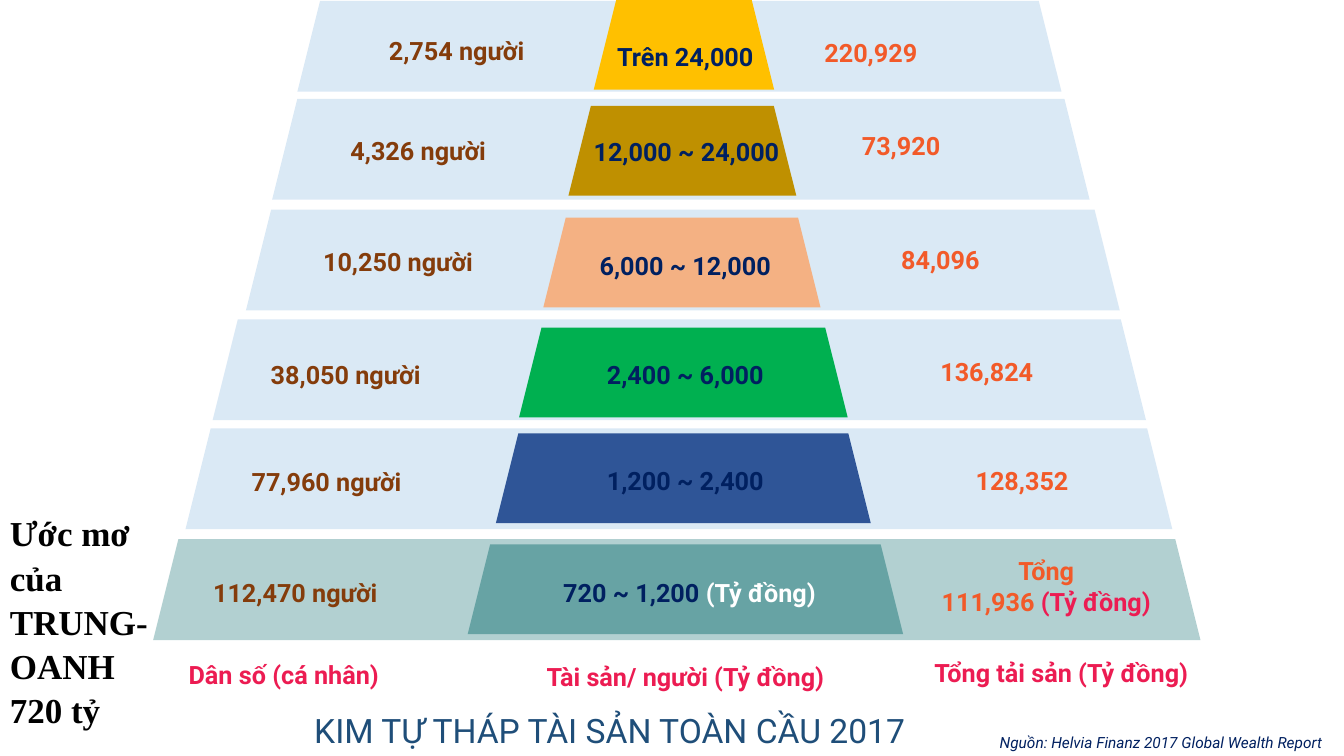
from dataclasses import dataclass
from typing import NamedTuple

from lxml.etree import SubElement
from pptx import Presentation
from pptx.dml.color import RGBColor
from pptx.enum.shapes import MSO_AUTO_SHAPE_TYPE as ShapeType
from pptx.enum.text import MSO_ANCHOR as Anchor, MSO_AUTO_SIZE as AutoSize, PP_ALIGN as Align
from pptx.oxml.ns import qn
from pptx.shapes.autoshape import Shape
from pptx.slide import Slide
from pptx.util import Pt


@dataclass(frozen=True)
class Theme:
    sans: str = "Roboto"
    serif: str = "Times New Roman"
    body: float = 18
    title: float = 24
    dream: float = 25
    source: float = 11
    line_spacing: float = 1.05
    white: str = "FFFFFF"
    black: str = "000000"
    navy: str = "002060"
    brown: str = "843C0B"
    orange: str = "F25A29"
    pink: str = "EC1C52"
    heading: str = "1F4E79"
    band: str = "5B9BD5"
    teal: str = "67A3A4"
    blue: str = "2F5597"
    green: str = "00B050"
    peach: str = "F4B183"
    ochre: str = "BF9000"
    gold: str = "FFC000"


THEME = Theme()


class Box(NamedTuple):
    left: float
    top: float
    width: float
    height: float


class Span(NamedTuple):
    text: str
    color: str
    size: float = THEME.body
    font: str = THEME.sans
    bold: bool = True
    italic: bool = False


Lines = list[list[Span]]


@dataclass(frozen=True)
class Label:
    box: Box
    lines: Lines
    align: Align = Align.CENTER


@dataclass(frozen=True)
class Tier:
    band: Box
    core: Box
    core_color: str
    people: Label
    wealth: Label
    total: Label
    band_color: str = THEME.band
    band_opacity: int = 22


def value(left: float, top: float, *lines: list[Span], width: float = 162.7, height: float = 28.8) -> Label:
    """Make a centred label of the usual size."""
    return Label(Box(left, top, width, height), list(lines))


def people(left: float, top: float, count: str) -> Label:
    """Make a head-count label."""
    return value(left, top, [Span(f"{count} người", THEME.brown)])


def wealth(left: float, top: float, limits: str) -> Label:
    """Make a wealth-range label."""
    return value(left, top, [Span(limits, THEME.navy)])


def total(left: float, top: float, amount: str) -> Label:
    """Make a total-wealth label."""
    return value(left, top, [Span(amount, THEME.orange)])


TIERS = [
    Tier(Box(212.4, 0.7, 545.8, 64.8), Box(424.1, 0, 128.9, 64.1), THEME.gold,
         people(244.8, 20.9, "2,754"), wealth(408.2, 25.2, "Trên 24,000"), total(540.7, 22.3, "220,929")),
    Tier(Box(194.4, 70.6, 583.9, 72), Box(406.1, 75.6, 162.7, 64.1), THEME.ochre,
         people(217.4, 92.2, "4,326"), wealth(409, 92.9, "12,000 ~ 24,000"), total(562.3, 88.6, "73,920")),
    Tier(Box(175.7, 149.8, 624.2, 72), Box(388.1, 155.5, 198, 64.1), THEME.peach,
         people(203, 171.4, "10,250"), wealth(408.2, 174.2, "6,000 ~ 12,000"), total(590.4, 169.9, "84,096")),
    Tier(Box(151.9, 228.2, 666.7, 72), Box(370.8, 234, 234.7, 64.1), THEME.green,
         people(165.6, 252, "38,050"), wealth(408.2, 252, "2,400 ~ 6,000"), total(623.5, 249.8, "136,824")),
    Tier(Box(132.5, 306, 704.9, 72), Box(354.2, 309.6, 267.8, 64.1), THEME.blue,
         people(151.9, 328.3, "77,960"), wealth(408.2, 327.6, "1,200 ~ 2,400"), total(648.7, 327.6, "128,352")),
    Tier(Box(109.4, 385.2, 748.1, 72), Box(334.1, 388.8, 311, 64.1), THEME.teal,
         people(129.6, 407.5, "112,470"),
         value(388.1, 407.5, [Span("720 ~ 1,200 ", THEME.navy), Span("(Tỷ đồng)", THEME.white)],
               width=208.8, height=51.1),
         value(653, 391.7, [Span("Tổng", THEME.orange)],
               [Span("111,936 ", THEME.orange), Span("(Tỷ đồng)", THEME.pink)], width=188.6, height=51.1),
         THEME.teal, 50),
]

COLUMN_NAMES = [
    value(114.5, 466.6, [Span("Dân số (cá nhân)", THEME.pink)], width=176.4),
    value(334.1, 468, [Span("Tài sản/ người (Tỷ đồng)", THEME.pink)], width=311),
    value(648.7, 465.1, [Span("Tổng tải sản (Tỷ đồng)", THEME.pink)], width=218.9),
]

CAPTIONS = [
    Label(Box(217.4, 501.8, 667.4, 36),
          [[Span("KIM TỰ THÁP TÀI SẢN TOÀN CẦU 2017", THEME.heading, THEME.title, bold=False)]], Align.LEFT),
    Label(Box(707, 519.1, 259.9, 20.9),
          [[Span("Nguồn: Helvia Finanz 2017 Global Wealth Report", THEME.navy, THEME.source,
                 bold=False, italic=True)]], Align.LEFT),
    Label(Box(0, 360.7, 114.5, 158.4),
          [[Span(text, THEME.black, THEME.dream, THEME.serif)]
           for text in ("Ước mơ của", "TRUNG- OANH", "720 tỷ")], Align.LEFT),
]


def points(box: Box) -> list[Pt]:
    """Turn a box into lengths."""
    return [Pt(length) for length in box]


def add_block(slide: Slide, kind: ShapeType, box: Box, color: str, opacity: int = 100) -> Shape:
    """Draw a filled shape without outline or shadow."""
    shape = slide.shapes.add_shape(kind, *points(box))
    shape.shadow.inherit = False
    shape.line.fill.background()
    shape.fill.solid()
    shape.fill.fore_color.rgb = RGBColor.from_string(color)
    if opacity < 100:
        color_element = next(shape.element.spPr.iter(qn("a:srgbClr")))
        SubElement(color_element, qn("a:alpha")).set("val", str(opacity * 1000))
    return shape


def write(shape: Shape, label: Label) -> None:
    """Write the label into a shape run by run."""
    frame = shape.text_frame
    frame.word_wrap = True
    frame.auto_size = AutoSize.SHAPE_TO_FIT_TEXT
    frame.vertical_anchor = Anchor.TOP
    for index, spans in enumerate(label.lines):
        paragraph = frame.add_paragraph() if index else frame.paragraphs[0]
        paragraph.alignment = label.align
        paragraph.line_spacing = THEME.line_spacing
        for span in spans:
            run = paragraph.add_run()
            run.text = span.text
            run.font.name = span.font
            run.font.size = Pt(span.size)
            run.font.bold = span.bold
            run.font.italic = span.italic
            run.font.color.rgb = RGBColor.from_string(span.color)


def add_label(slide: Slide, label: Label) -> None:
    """Draw a label as a text box."""
    write(slide.shapes.add_textbox(*points(label.box)), label)


def main() -> None:
    """Build the wealth pyramid slide."""
    presentation = Presentation()
    presentation.slide_width, presentation.slide_height = Pt(960), Pt(540)
    slide = presentation.slides.add_slide(presentation.slide_layouts[6])
    for tier in TIERS:
        add_block(slide, ShapeType.TRAPEZOID, tier.band, tier.band_color, tier.band_opacity)
        add_block(slide, ShapeType.TRAPEZOID, tier.core, tier.core_color)
        for label in (tier.people, tier.wealth, tier.total):
            add_label(slide, label)
    for label in COLUMN_NAMES:
        write(add_block(slide, ShapeType.RECTANGLE, label.box, THEME.white), label)
    for label in CAPTIONS:
        add_label(slide, label)
    presentation.save("out.pptx")


if __name__ == "__main__":
    main()
